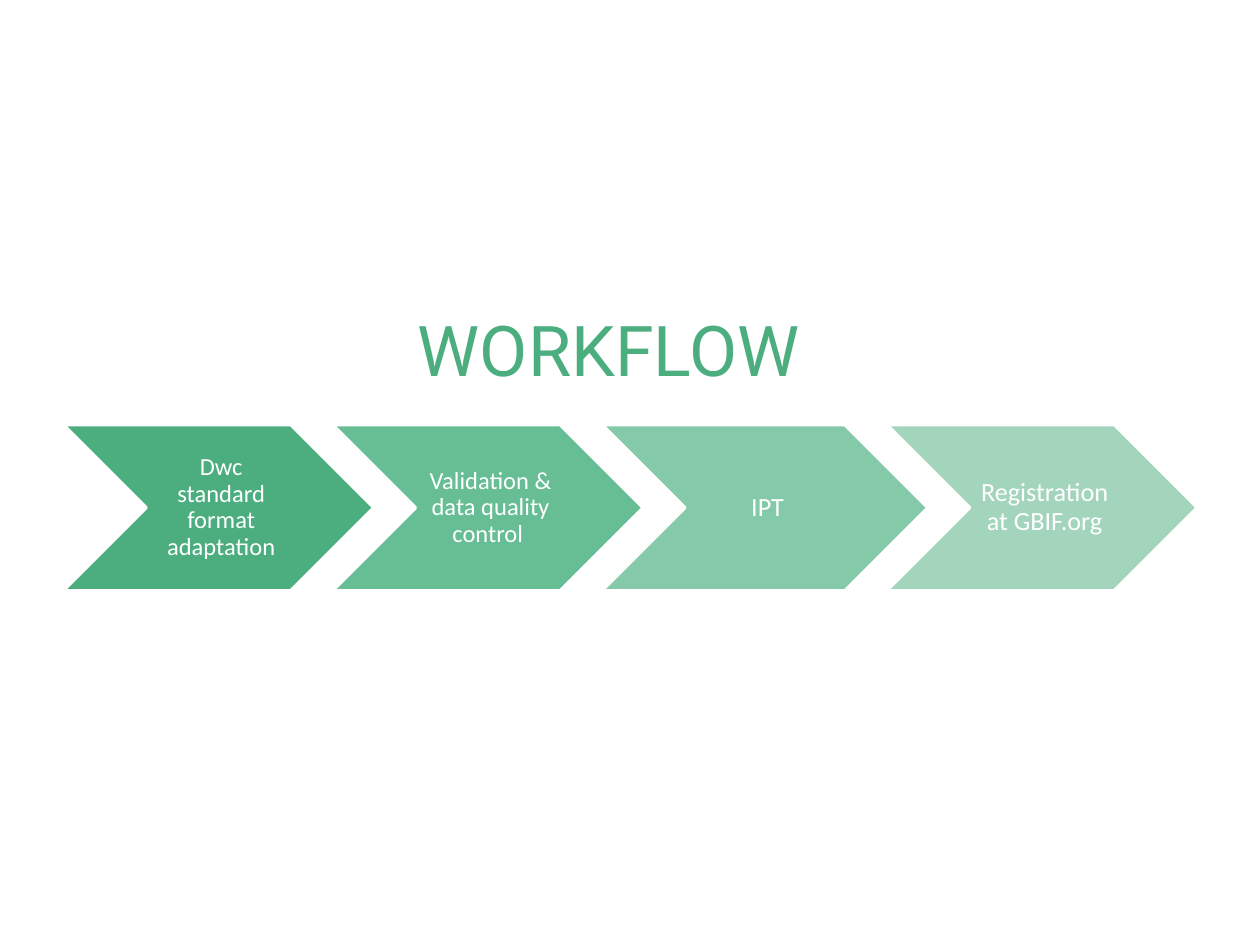
from dataclasses import dataclass

from pptx import Presentation
from pptx.dml.color import RGBColor
from pptx.enum import shapes, text
from pptx.util import Cm, Pt


@dataclass(frozen=True)
class Theme:
    title_font: str = "Roboto"
    label_font: str = "Calibri"
    title_size: int = 40
    small_size: int = 14
    label_size: int = 15
    white: str = "FFFFFF"
    greens: tuple = ("4CAE7F", "67BD94", "84CAA9", "A3D5BD")


THEME = Theme()
STEP_WIDTH = 6.27
WIDE_STEP_WIDTH = 6.58
STEP_OVERLAP = 0.84
STEPS = (
    ("Dwc standard format adaptation", STEP_WIDTH, THEME.small_size),
    ("Validation & data quality control ", STEP_WIDTH, THEME.small_size),
    ("IPT", WIDE_STEP_WIDTH, THEME.label_size),
    ("Registration at GBIF.org", STEP_WIDTH, THEME.label_size),
)


def write_text(frame, words, *, font, size, color, anchor, spacing=1.0):
    frame.word_wrap = True
    frame.auto_size = text.MSO_AUTO_SIZE.NONE
    frame.vertical_anchor = anchor
    para = frame.paragraphs[0]
    para.alignment = text.PP_ALIGN.CENTER
    para.line_spacing = spacing
    para.space_before = Pt(0)
    span = para.add_run()
    span.text = words
    span.font.name = font
    span.font.size = Pt(size)
    span.font.color.rgb = RGBColor.from_string(color)


def place_title(page, left, top, width, height):
    title = page.shapes.title
    title.left, title.top = Cm(left), Cm(top)
    title.width, title.height = Cm(width), Cm(height)
    write_text(title.text_frame, "WORKFLOW ", font=THEME.title_font,
               size=THEME.title_size, color=THEME.greens[0],
               anchor=text.MSO_ANCHOR.TOP)


def add_step(page, left, top, width, height, words, size, fill):
    step = page.shapes.add_shape(shapes.MSO_SHAPE.CHEVRON, Cm(left), Cm(top),
                                 Cm(width), Cm(height))
    step.shadow.inherit = False
    step.fill.solid()
    step.fill.fore_color.rgb = RGBColor.from_string(fill)
    step.line.color.rgb = RGBColor.from_string(THEME.white)
    step.line.width = Pt(2)
    frame = step.text_frame
    frame.margin_left = Cm(0.16)
    frame.margin_top = frame.margin_right = frame.margin_bottom = Cm(0.05)
    write_text(frame, words, font=THEME.label_font, size=size,
               color=THEME.white, anchor=text.MSO_ANCHOR.MIDDLE, spacing=0.9)


def add_workflow(page, left, top, height):
    for (words, width, size), fill in zip(STEPS, THEME.greens):
        add_step(page, left, top, width, height, words, size, fill)
        left += width - STEP_OVERLAP


def main():
    deck = Presentation()
    deck.slide_width, deck.slide_height = Cm(25.4), Cm(19.05)
    page = deck.slides.add_slide(deck.slide_layouts.get_by_name("Title Only"))
    place_title(page, 0, 6.05, 24.89, 2.21)
    add_workflow(page, 1.27, 8.56, 3.35)
    deck.save("out.pptx")


if __name__ == "__main__":
    main()
